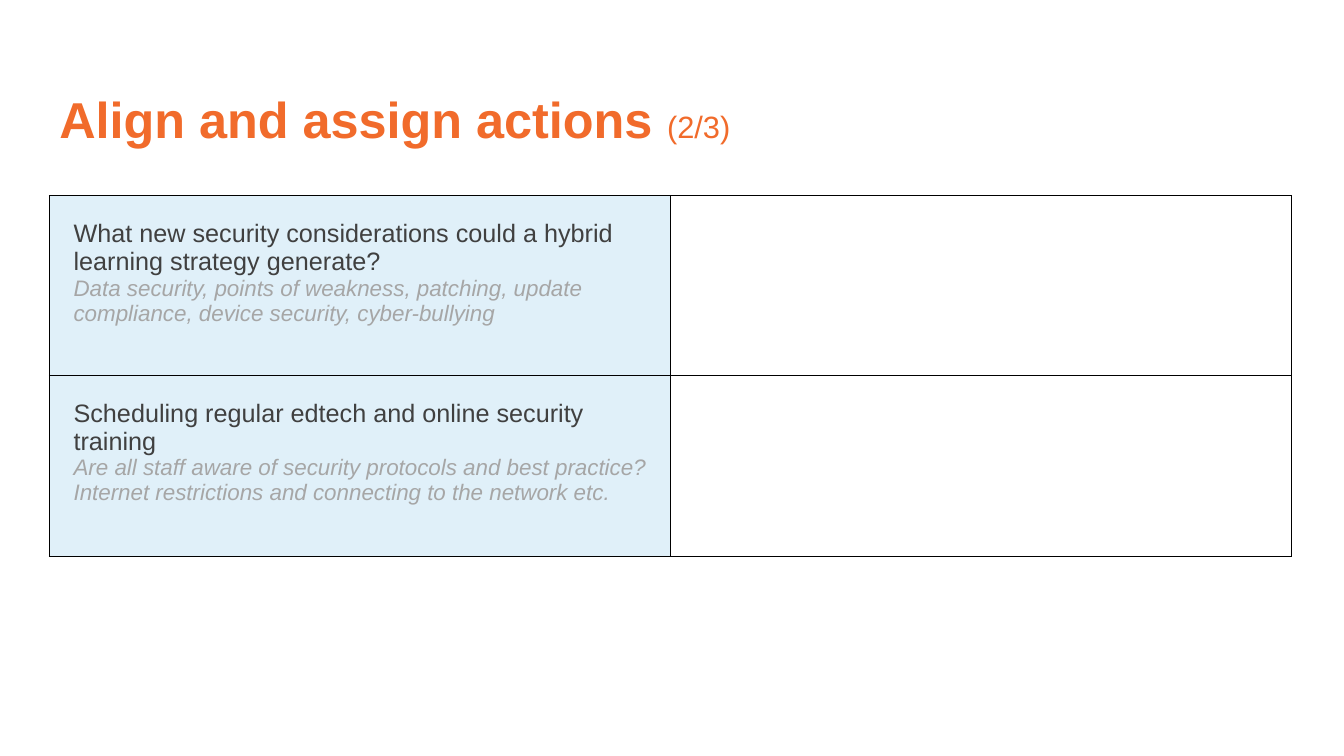
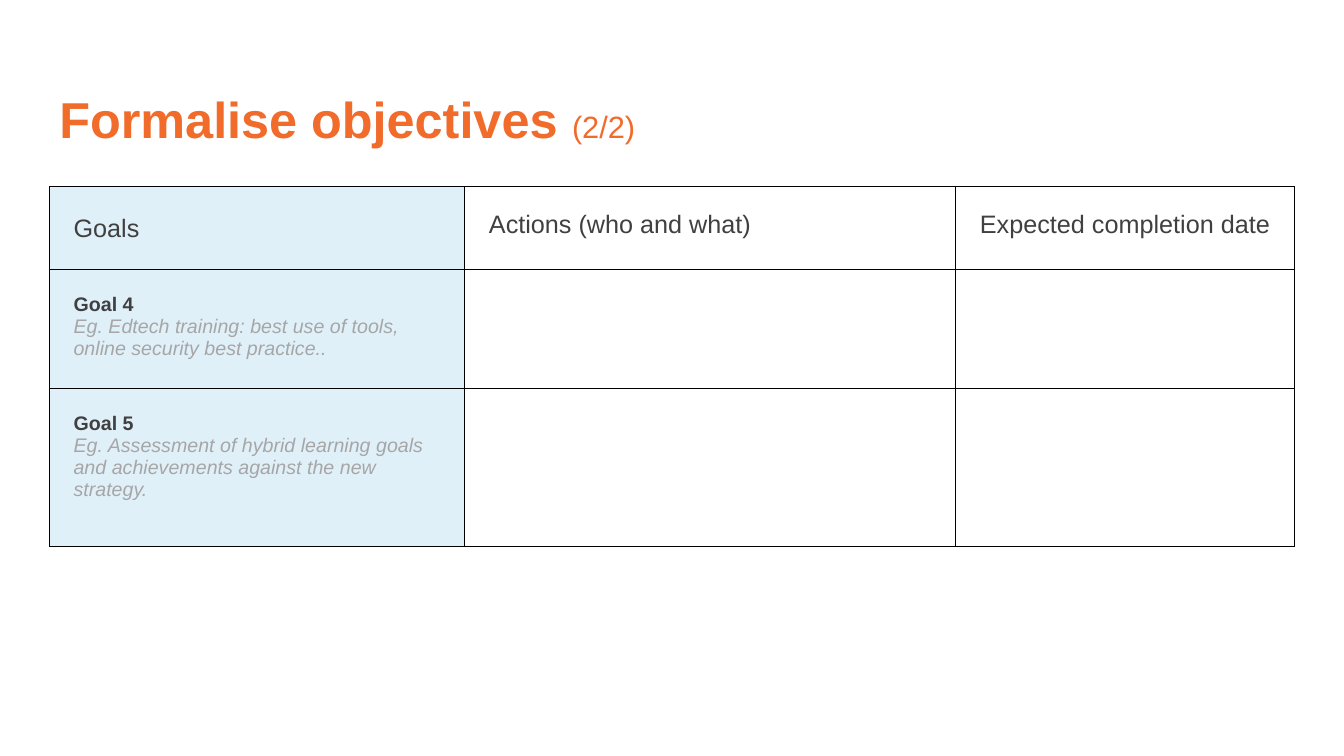
from lxml import etree
from pptx import Presentation
from pptx.dml.color import RGBColor
from pptx.enum.text import MSO_ANCHOR
from pptx.oxml.ns import qn
from pptx.util import Inches, Pt

MIDDLE = MSO_ANCHOR.MIDDLE
FONT = "Arial"
ORANGE, DARK, GREY = "F16B2B", "404040", "A6A6A6"
PALE_BLUE, WHITE, BLACK = "E0F0F9", "FFFFFF", "000000"
LEFT = 0.49
TITLE_BOX = (LEFT, 0.49, 11.5, 1.45)
CELL_MARGIN = 0.24
BORDER_WIDTH = 0.75


def color(hex_value):
    return RGBColor.from_string(hex_value)


def add_text(paragraph, text, size=18, fill=DARK, bold=False, italic=False):
    run = paragraph.add_run()
    run.text = text
    font = run.font
    font.name, font.size = FONT, Pt(size)
    font.bold, font.italic = bold, italic
    font.color.rgb = color(fill)


def add_title(slide, title, part):
    """Bold slide title followed by a lighter part number."""
    shape = slide.shapes.add_textbox(*map(Inches, TITLE_BOX))
    frame = shape.text_frame
    frame.word_wrap = True
    frame.vertical_anchor = MIDDLE
    paragraph = frame.paragraphs[0]
    paragraph.line_spacing = 0.9
    add_text(paragraph, title + " ", size=36, fill=ORANGE, bold=True)
    add_text(paragraph, part, size=22, fill=ORANGE)


def set_borders(cell):
    properties = cell._tc.get_or_add_tcPr()
    for side in ("lnL", "lnR", "lnT", "lnB"):
        line = etree.SubElement(properties, qn(f"a:{side}"), w=str(Pt(BORDER_WIDTH)))
        solid = etree.SubElement(line, qn("a:solidFill"))
        etree.SubElement(solid, qn("a:srgbClr"), val=BLACK)


def fill_cell(cell, paragraphs, background):
    """Format a cell; each paragraph is a text with its format."""
    set_borders(cell)
    cell.fill.solid()
    cell.fill.fore_color.rgb = color(background)
    cell.margin_left = cell.margin_right = Inches(CELL_MARGIN)
    cell.margin_top = cell.margin_bottom = Inches(CELL_MARGIN)
    frame = cell.text_frame
    for index, (text, text_format) in enumerate(paragraphs):
        paragraph = frame.add_paragraph() if index else frame.paragraphs[0]
        add_text(paragraph, text, **text_format)


def add_worksheet(slide, top, widths, heights, rows):
    """Grid with a tinted first column; cells missing from a row stay empty."""
    table = slide.shapes.add_table(
        len(heights), len(widths), Inches(LEFT), Inches(top),
        Inches(sum(widths)), Inches(sum(heights))).table
    table.first_row = table.horz_banding = False
    for column, width in zip(table.columns, widths):
        column.width = Inches(width)
    for row, height, contents in zip(table.rows, heights, rows):
        row.height = Inches(height)
        for index, cell in enumerate(row.cells):
            paragraphs = contents[index] if index < len(contents) else []
            fill_cell(cell, paragraphs, WHITE if index else PALE_BLUE)
    return table


def prompt(heading, hint, heading_format, hint_size):
    hint_format = {"size": hint_size, "fill": GREY, "italic": True}
    return [(heading, heading_format), (hint, hint_format)]


def question(heading, hint):
    return [prompt(heading, hint, {}, 16)]


def goal(heading, hint):
    return [prompt(heading, hint, {"size": 14, "bold": True}, 14)]


def build_actions(slide):
    add_title(slide, "Align and assign actions", "(2/3)")
    add_worksheet(slide, 1.94, (6.16, 6.16), (1.78, 1.8), [
        question("What new security considerations could a hybrid learning strategy generate?",
                 "Data security, points of weakness, patching, update compliance, "
                 "device security, cyber-bullying"),
        question("Scheduling regular edtech and online security training",
                 "Are all staff aware of security protocols and best practice? "
                 "Internet restrictions and connecting to the network etc."),
    ])


def build_objectives(slide):
    add_title(slide, "Formalise objectives", "(2/2)")
    headers = ("Goals", "Actions (who and what)", "Expected completion date")
    table = add_worksheet(slide, 1.85, (4.12, 4.87, 3.36), (0.79, 1.13, 1.57), [
        [[(header, {})] for header in headers],
        goal("Goal 4", "Eg. Edtech training: best use of tools, "
                       "online security best practice.."),
        goal("Goal 5", "Eg. Assessment of hybrid learning goals and achievements "
                       "against the new strategy."),
    ])
    table.cell(0, 0).text_frame.paragraphs[0].line_spacing = 1.15


def main():
    presentation = Presentation()
    presentation.slide_width = Inches(13.33)
    presentation.slide_height = Inches(7.5)
    blank = presentation.slide_layouts[6]
    for build in (build_actions, build_objectives):
        build(presentation.slides.add_slide(blank))
    presentation.save("out.pptx")


if __name__ == "__main__":
    main()
